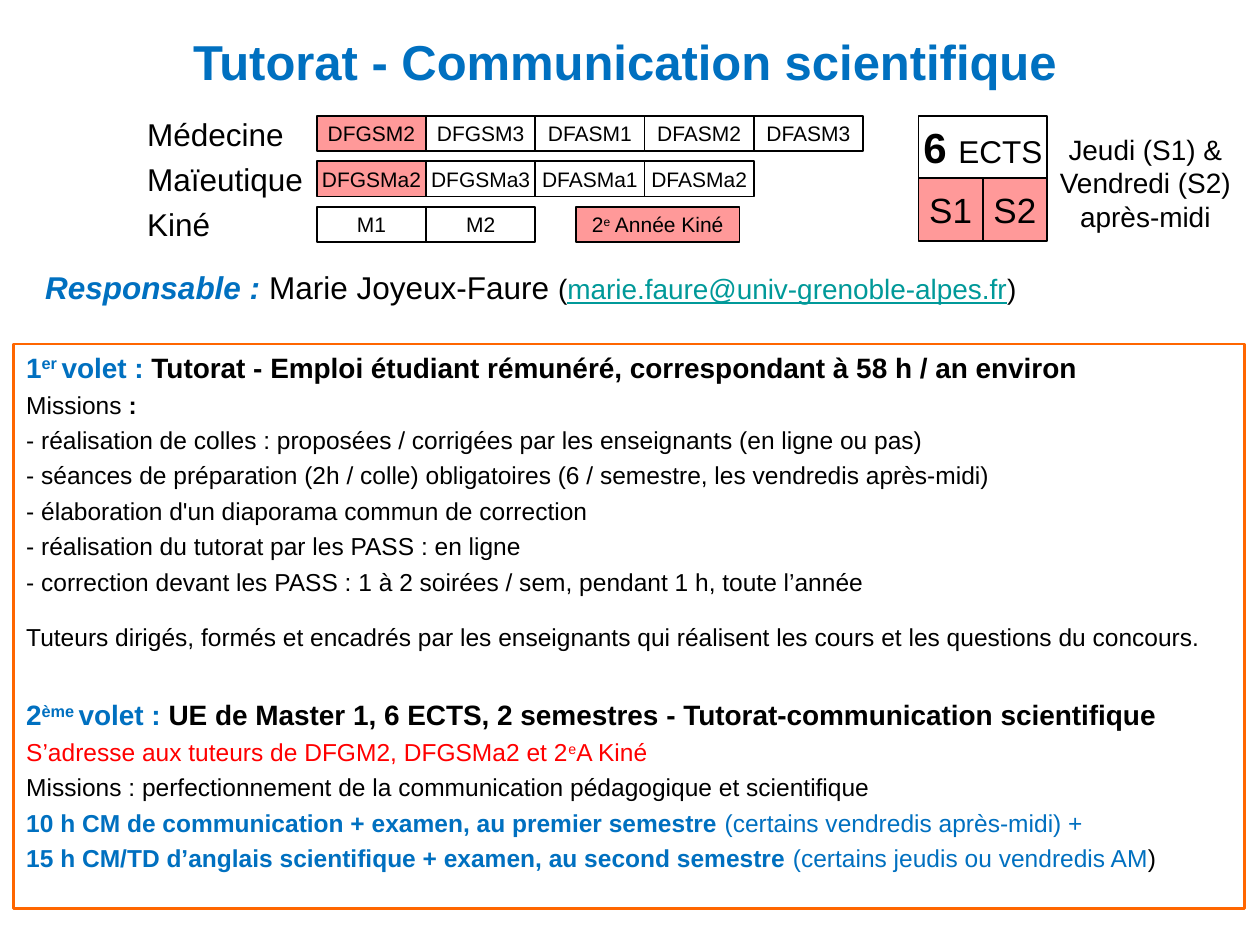
from collections import namedtuple
from dataclasses import dataclass

from pptx import Presentation
from pptx import util as u
from pptx.dml.color import RGBColor
from pptx.enum import shapes, text


@dataclass(frozen=True)
class Theme:
    font: str = "Arial"
    black: str = "000000"
    white: str = "FFFFFF"
    blue: str = "0070C0"
    red: str = "FF0000"
    teal: str = "009999"
    pink: str = "FF9999"
    orange: str = "FF6600"
    title: int = 28
    credit: int = 24
    semester: int = 20
    label: int = 18
    heading: int = 16
    body: int = 14
    cell: int = 12


THEME = Theme()
WIDTH, HEIGHT = 10, 7.5
LEFT, CENTER = text.PP_ALIGN.LEFT, text.PP_ALIGN.CENTER
TOP, MIDDLE = text.MSO_ANCHOR.TOP, text.MSO_ANCHOR.MIDDLE
Box = namedtuple("Box", "left top width height")


def share(left, top, width, height):
    """Box given in percent of the slide's width and height."""
    return Box(left * WIDTH / 100, top * HEIGHT / 100,
               width * WIDTH / 100, height * HEIGHT / 100)


def grid_cell(box, col, row, cols, rows, gap=0):
    """Cell of an even grid in box, with a vertical gap between rows."""
    width = box.width / cols
    height = (box.height - gap * (rows - 1)) / rows
    return Box(box.left + col * width, box.top + row * (height + gap), width, height)


def inches(box):
    return [u.Inches(length) for length in box]


def add_span(para, words, size=THEME.body, color=THEME.black, bold=False,
             italic=False, underline=False, raised=False):
    span = para.add_run()
    span.text = words
    font = span.font
    font.name, font.size = THEME.font, u.Pt(size)
    font.bold, font.italic, font.underline = bold, italic, underline
    font.color.rgb = RGBColor.from_string(color)
    if raised:
        font._element.set("baseline", "30000")


def write(shape, paras, align=LEFT, anchor=TOP, wrap=True, inset=0.1, before=0, **style):
    """Each paragraph is a string or a list of (words, format) spans."""
    frame = shape.text_frame
    frame.word_wrap, frame.vertical_anchor = wrap, anchor
    frame.margin_left = frame.margin_right = u.Inches(inset)
    frame.margin_top = frame.margin_bottom = u.Inches(min(inset, 0.05))
    for index, spans in enumerate(paras):
        para = frame.add_paragraph() if index else frame.paragraphs[0]
        para.alignment = align
        para.space_before = u.Pt(before)
        for words, extra in [(spans, {})] if isinstance(spans, str) else spans:
            add_span(para, words, **{**style, **extra})


def add_text(page, box, paras, **style):
    shape = page.shapes.add_textbox(*inches(box))
    write(shape, paras, **style)
    return shape


def add_rect(page, box, fill=None, line=THEME.black, weight=1):
    shape = page.shapes.add_shape(shapes.MSO_SHAPE.RECTANGLE, *inches(box))
    shape.shadow.inherit = False
    if fill:
        shape.fill.solid()
        shape.fill.fore_color.rgb = RGBColor.from_string(fill)
    else:
        shape.fill.background()
    shape.line.color.rgb = RGBColor.from_string(line)
    shape.line.width = u.Pt(weight)
    return shape


def add_cell(page, box, spans, fill=THEME.white, size=THEME.cell):
    write(add_rect(page, box, fill), [spans], align=CENTER, anchor=MIDDLE,
          wrap=False, inset=0, size=size)


def title_band(page, box):
    add_text(page, box, ["Tutorat - Communication scientifique"], align=CENTER,
             anchor=MIDDLE, size=THEME.title, color=THEME.blue, bold=True)


def study_years(page, box):
    """Labels in the first quarter, year cells in the rest."""
    tracks = [
        ("Médecine", ["DFGSM2", "DFGSM3", "DFASM1", "DFASM2", "DFASM3"]),
        ("Maïeutique", ["DFGSMa2", "DFGSMa3", "DFASMa1", "DFASMa2"]),
        ("Kiné", ["M1", "M2"]),
    ]
    label_width = box.width / 4
    years = Box(box.left + label_width, box.top, box.width - label_width, box.height)
    for row, (label, names) in enumerate(tracks):
        for col, name in enumerate(names):
            cell = grid_cell(years, col, row, 5, 3, gap=0.08)
            eligible = col == 0 and label != "Kiné"
            add_cell(page, cell, name, THEME.pink if eligible else THEME.white)
        add_text(page, Box(box.left, cell.top - 0.06, label_width, 0.4), [label],
                 wrap=False, size=THEME.label)
    # The eligible Kiné year stands apart, one and a half cells wide
    apart = Box(years.left + 2.37 * cell.width, cell.top, 1.5 * cell.width, cell.height)
    add_cell(page, apart, [("2", {}), ("e", {"raised": True}), (" Année Kiné", {})], THEME.pink)


def credits_block(page, box):
    add_cell(page, grid_cell(box, 0, 0, 1, 2),
             [("6 ", {"size": THEME.credit, "bold": True}), ("ECTS", {})], None, THEME.label)
    for col, name in enumerate(["S1", "S2"]):
        add_cell(page, grid_cell(box, col, 1, 2, 2), name, THEME.pink, THEME.semester)


def schedule(page, box):
    add_text(page, box, ["Jeudi (S1) & Vendredi (S2)", "après-midi"],
             align=CENTER, size=THEME.heading)


def contact_line(page, box):
    add_text(page, box, [[
        ("Responsable : ", {"color": THEME.blue, "bold": True, "italic": True}),
        ("Marie Joyeux-Faure ", {}),
        ("(", {"size": THEME.heading}),
        ("marie.faure@univ-grenoble-alpes.fr",
         {"size": THEME.heading, "color": THEME.teal, "underline": True}),
        (")", {"size": THEME.heading}),
    ]], size=THEME.label)


def part_heading(number, suffix, topic):
    strong = {"size": THEME.heading, "bold": True}
    blue = {**strong, "color": THEME.blue}
    return [(number, blue), (suffix + " ", {**blue, "raised": True}),
            ("volet : ", blue), (topic, strong)]


def programme(page, box):
    red, blue = {"color": THEME.red}, {"color": THEME.blue}
    strong = {**blue, "bold": True}
    paras = [
        part_heading("1", "er", "Tutorat - Emploi étudiant rémunéré, correspondant à 58 h / an environ"),
        [("Missions ", {}), (":", {"bold": True})],
        "- réalisation de colles : proposées / corrigées par les enseignants (en ligne ou pas)",
        "- séances de préparation (2h / colle) obligatoires (6 / semestre, les vendredis après-midi)",
        "- élaboration d'un diaporama commun de correction",
        "- réalisation du tutorat par les PASS : en ligne",
        "- correction devant les PASS : 1 à 2 soirées / sem, pendant 1 h, toute l’année",
        "Tuteurs dirigés, formés et encadrés par les enseignants qui réalisent les cours "
        "et les questions du concours.",
        part_heading("2", "ème", "UE de Master 1, 6 ECTS, 2 semestres - Tutorat-communication scientifique"),
        [("S’adresse aux tuteurs de DFGM2, DFGSMa2 et 2", red),
         ("e", {**red, "raised": True}), ("A Kiné", red)],
        "Missions : perfectionnement de la communication pédagogique et scientifique",
        [("10 h CM de communication + examen, au premier semestre ", strong),
         ("(certains vendredis après-midi) +", blue)],
        [("15 h CM/TD d’anglais scientifique + examen, au second semestre ", strong),
         ("(certains jeudis ou vendredis AM", blue), (")", {})],
    ]
    frame = add_rect(page, box, line=THEME.orange, weight=1.5)
    write(frame, paras, before=3.4)
    # Wider gaps set off the closing remark and the second part
    for index, gap in [(7, 14.7), (8, 26.5)]:
        frame.text_frame.paragraphs[index].space_before = u.Pt(gap)


def main():
    deck = Presentation()
    deck.slide_width, deck.slide_height = u.Inches(WIDTH), u.Inches(HEIGHT)
    page = deck.slides.add_slide(deck.slide_layouts[6])
    title_band(page, share(0.8, 1.5, 97.6, 9.8))
    programme(page, share(1.1, 36.4, 97.7, 59.73))
    study_years(page, share(10.7, 12.27, 57.8, 13.33))
    credits_block(page, share(72.9, 12.27, 10.2, 13.2))
    schedule(page, share(81.8, 13.33, 18.2, 12.5))
    contact_line(page, share(2.6, 27.73, 92.4, 5.33))
    deck.save("out.pptx")


if __name__ == "__main__":
    main()
